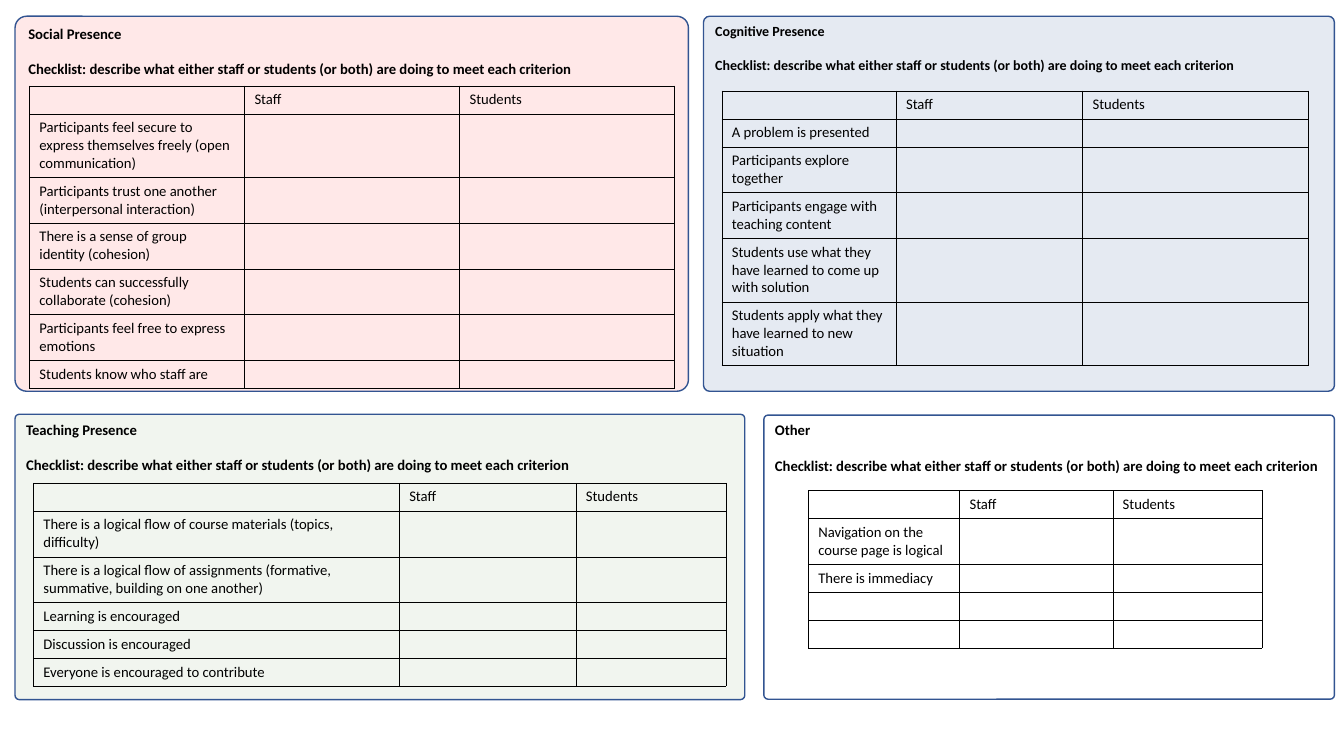
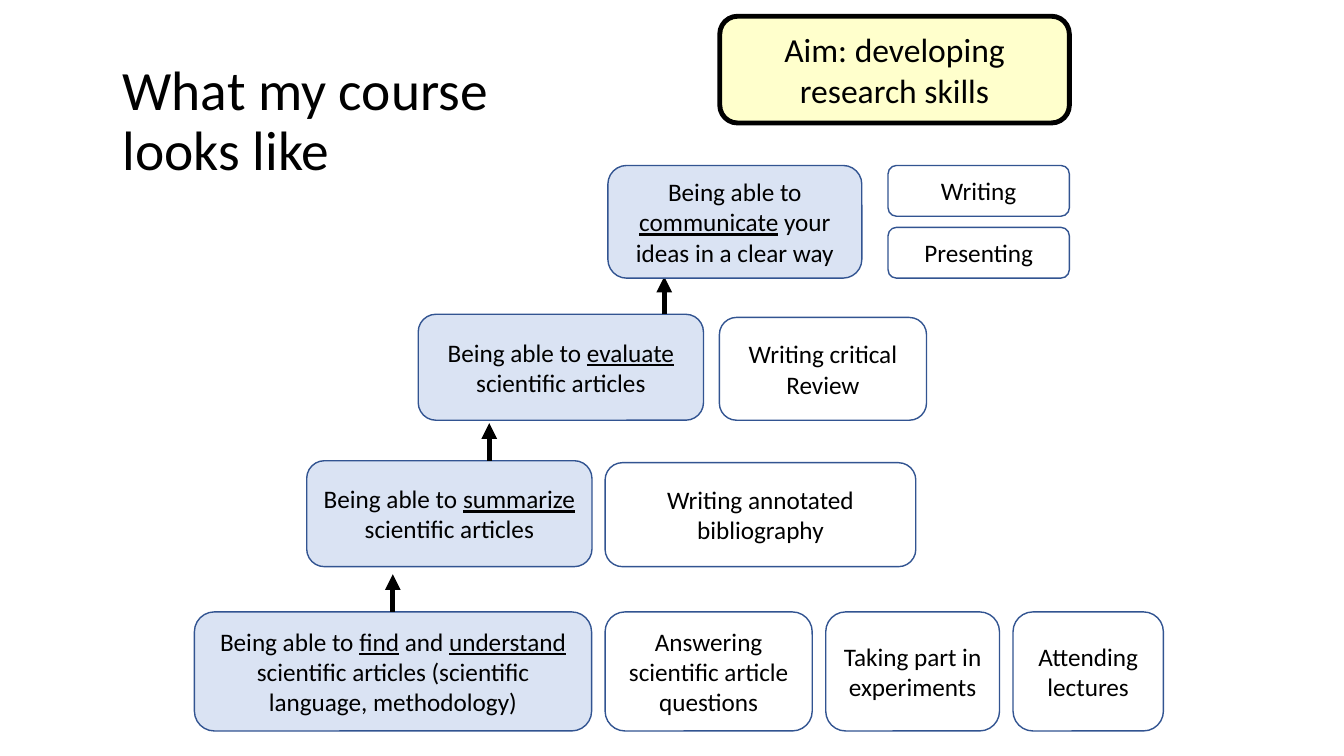
"""Build two slides: presence checklists and a course outline."""
from lxml.etree import SubElement
from pptx import Presentation
from pptx.dml.color import RGBColor
from pptx.enum.shapes import MSO_CONNECTOR as LINK, MSO_SHAPE as SHAPE
from pptx.enum.text import MSO_ANCHOR as ANCHOR, PP_ALIGN as ALIGN
from pptx.oxml.ns import qn
from pptx.util import Cm, Pt

FONT = "Calibri"
INK, EDGE, SKILL, AIM = "000000", "325491", "DAE3F3", "FFFFCC"
BODY = 10.5
ROW = 0.7
GAP = 0.28
RISE = 0.95
TASK = "Checklist: describe what either staff or students (or both) are doing to meet each criterion"
HEAD = ["", "Staff", "Students"]
MID = {"word_wrap": True, "vertical_anchor": ANCHOR.MIDDLE}
TOP = {"word_wrap": True, "vertical_anchor": ANCHOR.TOP}

PANELS = [
    {"box": (0.38, 0.41, 16.97, 9.45), "title": "Social Presence", "tint": ("FF0000", 9),
     "bend": 0.031, "shift": (0.36, 1.75), "cols": (5.42, 5.42, 5.42),
     "items": ["Participants feel secure to express themselves freely (open communication)",
               "Participants trust one another (interpersonal interaction)",
               "There is a sense of group identity (cohesion)",
               "Students can successfully collaborate (cohesion)",
               "Participants feel free to express emotions",
               "Students know who staff are"]},
    {"box": (17.73, 0.41, 15.9, 9.45), "title": "Cognitive Presence", "tint": ("2F5597", 12),
     "bend": 0.016, "shift": (0.46, 1.88), "cols": (4.39, 4.7, 5.69), "size": 10,
     "items": ["A problem is presented",
               "Participants explore together",
               "Participants engage with teaching content",
               "Students use what they have learned to come up with solution",
               "Students apply what they have learned to new situation"]},
    {"box": (0.38, 10.44, 18.39, 7.19), "title": "Teaching Presence", "tint": ("548235", 8),
     "bend": 0.015, "shift": (0.46, 1.73), "cols": (9.22, 4.45, 3.78),
     "items": ["There is a logical flow of course materials (topics, difficulty)",
               "There is a logical flow of assignments (formative, summative, building on one another)",
               "Learning is encouraged",
               "Discussion is encouraged",
               "Everyone is encouraged to contribute"]},
    {"box": (19.25, 10.46, 14.38, 7.16), "title": "Other", "tint": None,
     "bend": 0.015, "shift": (1.12, 1.9), "cols": (3.81, 3.86, 3.76),
     "items": ["Navigation on the course page is logical", "There is immediacy", "", ""]},
]

STEPS = [
    {"box": (4.9, 15.42, 10.01, 3.0), "gap": 0.34, "dip": 0, "stem": 5.0,
     "skill": "Being able to _find_ and _understand_ scientific articles (scientific language, methodology)",
     "tasks": [(5.22, ["Answering scientific article questions"]),
               (4.38, ["Taking part in experiments"]),
               (3.79, ["Attending lectures"])]},
    {"box": (7.73, 11.61, 7.19, 2.67), "gap": 0.33, "dip": 0.05, "stem": 4.6,
     "skill": "Being able to _summarize_ scientific articles",
     "tasks": [(7.83, ["Writing annotated bibliography"])]},
    {"box": (10.54, 7.92, 7.19, 2.67), "gap": 0.4, "dip": 0.08, "stem": 6.2,
     "skill": "Being able to _evaluate_ scientific articles",
     "tasks": [(5.22, ["Writing critical Review"])]},
    {"box": (15.32, 4.17, 6.4, 2.84), "gap": 0.66, "dip": 0, "stem": None,
     "skill": "Being able to _communicate_ your ideas in a clear way",
     "tasks": [(4.57, ["Writing", "Presenting"])]},
]


def hue(code):
    """Turn a hex string into a colour."""
    return RGBColor.from_string(code)


def put(item, vals):
    """Set each named value on an item."""
    for name, val in vals.items():
        setattr(item, name, val)


def write(frame, lines, size, bold=False, form=None):
    """Fill a text frame; text between underscores is underlined."""
    for num, line in enumerate(lines):
        par = frame.add_paragraph() if num else frame.paragraphs[0]
        put(par, form or {})
        if num:
            par.space_before = Pt(round(size * 1.22, 1))
        for idx, part in enumerate(line.split("_")):
            if part:
                run = par.add_run()
                run.text = part
                put(run.font, {"name": FONT, "size": Pt(size), "bold": bold,
                               "underline": idx % 2 == 1})
                run.font.color.rgb = hue(INK)
        if not line:
            SubElement(par._p, qn("a:endParaRPr"), sz=str(int(size * 100)))


def card(slide, box, fill=None, edge=EDGE, width=1, bend=None):
    """Draw a rounded box and return it."""
    shape = slide.shapes.add_shape(SHAPE.ROUNDED_RECTANGLE, *map(Cm, box))
    shape.shadow.inherit = False
    if bend is not None:
        shape.adjustments[0] = bend
    if fill:
        shape.fill.solid()
        shape.fill.fore_color.rgb = hue(fill)
    else:
        shape.fill.background()
    shape.line.color.rgb = hue(edge)
    shape.line.width = Pt(width)
    return shape


def label(slide, box, text, size=18, **look):
    """Draw a rounded box with centred text."""
    frame = card(slide, box, **look).text_frame
    put(frame, MID)
    write(frame, [text], size, form={"alignment": ALIGN.CENTER})


def rule(cell):
    """Give a cell thin borders and no fill."""
    props = cell._tc.get_or_add_tcPr()
    for side in ("lnL", "lnR", "lnT", "lnB"):
        line = SubElement(props, qn(f"a:{side}"), w=str(Pt(0.25)))
        SubElement(SubElement(line, qn("a:solidFill")), qn("a:srgbClr"), val=INK)
    cell.fill.background()


def grid(slide, left, top, cols, items):
    """Place a checklist table."""
    rows = [HEAD] + [[item, "", ""] for item in items]
    table = slide.shapes.add_table(len(rows), len(cols), Cm(left), Cm(top),
                                   Cm(sum(cols)), Cm(ROW * len(rows))).table
    put(table, {"first_row": False, "horz_banding": False})
    for col, width in zip(table.columns, cols):
        col.width = Cm(width)
    for row, texts in zip(table.rows, rows):
        row.height = Cm(ROW)
        for cell, text in zip(row.cells, texts):
            rule(cell)
            write(cell.text_frame, [text], BODY)


def panel(slide, box, title, tint, bend, shift, cols, items, size=BODY):
    """Draw a tinted panel with its heading and table."""
    shape = card(slide, box, fill=tint and tint[0], bend=bend)
    if tint:
        code = next(shape._element.spPr.iter(qn("a:srgbClr")))
        SubElement(code, qn("a:alpha"), val=str(tint[1] * 1000))
    put(shape.text_frame, TOP)
    write(shape.text_frame, [title, TASK], size, bold=True, form={"alignment": ALIGN.LEFT})
    grid(slide, box[0] + shift[0], box[1] + shift[1], cols, items)


def arrow(slide, x, y):
    """Draw an arrow rising from a point."""
    line = slide.shapes.add_connector(LINK.STRAIGHT, Cm(x), Cm(y), Cm(x), Cm(y - RISE))
    line.line.color.rgb = hue(INK)
    line.line.width = Pt(3.75)
    SubElement(line.line._get_or_add_ln(), qn("a:tailEnd"), type="triangle")
    SubElement(line._element.spPr, qn("a:effectLst"))


def step(slide, box, skill, tasks, gap, dip, stem):
    """Draw a skill, the tasks to its right and the arrow above it."""
    left, top, width, height = box
    label(slide, box, skill, fill=SKILL)
    x = left + width + gap
    for wide, texts in tasks:
        high = (height - dip - GAP * (len(texts) - 1)) / len(texts)
        for num, text in enumerate(texts):
            label(slide, (x, top + dip + num * (high + GAP), wide, high), text)
        x += wide + gap
    if stem:
        arrow(slide, left + stem, top)


def title(slide, box, text):
    """Place the slide title."""
    frame = slide.shapes.add_textbox(*map(Cm, box)).text_frame
    put(frame, MID)
    write(frame, [text], 39.6, form={"line_spacing": 0.9})


def main():
    """Build and save the deck."""
    deck = Presentation()
    put(deck, {"slide_width": Cm(33.87), "slide_height": Cm(19.05)})
    checks, course = (deck.slides.add_slide(deck.slide_layouts[6]) for _ in range(2))
    for spot in PANELS:
        panel(checks, **spot)
    title(course, (2.84, 2.31, 9.8, 1.55), "What my course looks like")
    label(course, (18.14, 0.41, 8.81, 2.69), "Aim: developing research skills",
          size=24, fill=AIM, edge=INK, width=3.5)
    for stage in STEPS:
        step(course, **stage)
    deck.save("out.pptx")


if __name__ == "__main__":
    main()
